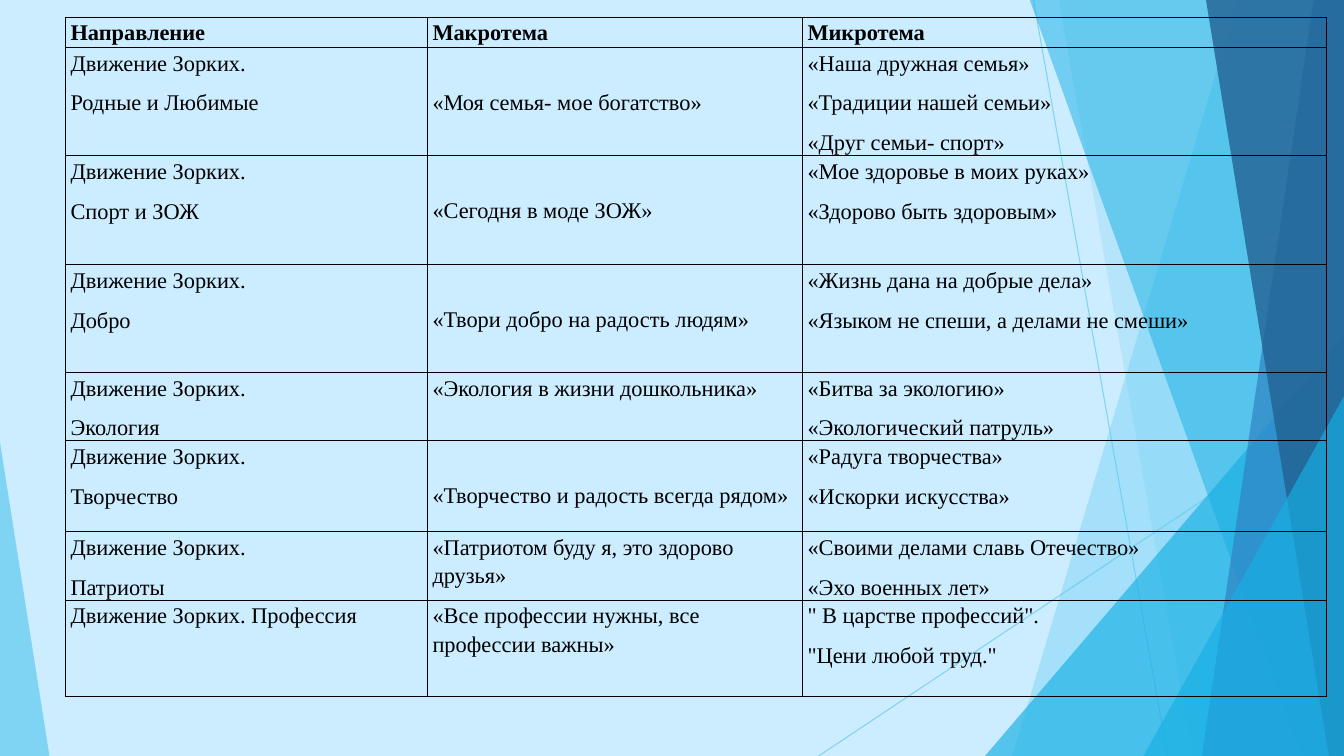
from lxml import etree
from pptx import Presentation
from pptx.dml.color import RGBColor
from pptx.enum.shapes import MSO_CONNECTOR, MSO_SHAPE
from pptx.oxml.ns import qn
from pptx.util import Pt

PX = 9144  # EMU per px, 100 px to the inch
W, H = 1333, 750
LINE = MSO_CONNECTOR.STRAIGHT
TRIANGLE = MSO_SHAPE.ISOSCELES_TRIANGLE

FONT = "Times New Roman"
BLACK = RGBColor(0x00, 0x00, 0x00)
PALE = RGBColor(0xCC, 0xEC, 0xFF)
SKY = RGBColor(0x5F, 0xCB, 0xEF)
CYAN = RGBColor(0x17, 0xB0, 0xE4)
BLUE = RGBColor(0x2E, 0x83, 0xC3)
NAVY = RGBColor(0x22, 0x62, 0x92)

COLS = [359, 372, 520]
ROW_HEIGHTS = [30, 107, 108, 107, 68, 90, 68, 96]
LOWERED_ROWS = {1, 2, 3, 5}  # middle cell starts level with the second line
LINE_STEP = 39
MOVEMENT = "Движение Зорких."
ROWS = [
    (["Направление"], ["Макротема"], ["Микротема"]),
    ([MOVEMENT, "Родные и Любимые"], ["«Моя семья- мое богатство»"],
     ["«Наша дружная семья»", "«Традиции нашей семьи»", "«Друг семьи- спорт»"]),
    ([MOVEMENT, "Спорт и ЗОЖ"], ["«Сегодня в моде ЗОЖ»"],
     ["«Мое здоровье в моих руках»", "«Здорово быть здоровым»"]),
    ([MOVEMENT, "Добро"], ["«Твори добро на радость людям»"],
     ["«Жизнь дана на добрые дела»", "«Языком не спеши, а делами не смеши»"]),
    ([MOVEMENT, "Экология"], ["«Экология в жизни дошкольника»"],
     ["«Битва за экологию»", "«Экологический патруль»"]),
    ([MOVEMENT, "Творчество"], ["«Творчество и радость всегда рядом»"],
     ["«Радуга творчества»", "«Искорки искусства»"]),
    ([MOVEMENT, "Патриоты"], ["«Патриотом буду я, это здорово друзья»"],
     ["«Своими делами славь Отечество»", "«Эхо военных лет»"]),
    ([MOVEMENT + " Профессия"], ["«Все профессии нужны, все профессии важны»"],
     ['" В царстве профессий".', '"Цени любой труд."']),
]


def set_alpha(sp, percent):
    for clr in sp._element.spPr.iter(qn("a:srgbClr")):
        etree.SubElement(clr, qn("a:alpha"), val=str(percent * 1000))


def paint(sp, color, alpha):
    sp.shadow.inherit = False
    sp.fill.solid()
    sp.fill.fore_color.rgb = color
    sp.line.fill.background()
    set_alpha(sp, alpha)


def add_ray(s, x1, y1, x2, y2):
    ln = s.shapes.add_connector(LINE, x1 * PX, y1 * PX, x2 * PX, y2 * PX)
    ln.line.color.rgb = SKY
    ln.line.width = Pt(0.75)
    set_alpha(ln, 70)
    etree.SubElement(ln._element.spPr, qn("a:effectLst"))


def add_band(s, right, top, bottom, top_x, bottom_x, color, alpha):
    """Fill from a slanted left edge to the straight right edge."""
    fb = s.shapes.build_freeform(top_x, top, scale=PX)
    fb.add_line_segments([(right, top), (right, bottom), (bottom_x, bottom)])
    paint(fb.convert_to_shape(), color, alpha)


def add_triangle(s, x, y, w, h, apex, color, alpha):
    sp = s.shapes.add_shape(TRIANGLE, x * PX, y * PX, w * PX, h * PX)
    sp.adjustments[0] = apex
    paint(sp, color, alpha)


def add_backdrop(s, w, h):
    add_ray(s, w - 308, 0, w - 175, h)
    add_ray(s, w, 403, w - 521, h)
    add_band(s, w, -1, h, w - 105, w - 329, SKY, 36)
    add_band(s, w, -1, h, w - 283, w - 150, SKY, 20)
    add_triangle(s, w - 356, h - 417, 356, 417, 1, CYAN, 66)
    add_band(s, w, -1, h, w - 312, w - 42, CYAN, 50)
    add_band(s, w, -1, h, w - 30, w - 141, BLUE, 70)
    add_band(s, w, -1, h, w - 137, w - 15, NAVY, 80)
    add_triangle(s, w - 199, h - 357, 199, 357, 1, CYAN, 66)
    add_triangle(s, 0, h - 311, 49, 311, 0, SKY, 70)


def write(p, text, size=16, bold=False, color=BLACK):
    p.line_spacing = 1.15
    p.space_after = Pt(8)
    r = p.add_run()
    r.text = text
    r.font.name = FONT
    r.font.size = Pt(size)
    r.font.bold = bold
    r.font.color.rgb = color


def add_borders(cell):
    tc_pr = cell._tc.get_or_add_tcPr()
    for side in ("lnL", "lnR", "lnT", "lnB"):
        ln = etree.SubElement(tc_pr, qn(f"a:{side}"), w=str(Pt(1)))
        fill = etree.SubElement(ln, qn("a:solidFill"))
        etree.SubElement(fill, qn("a:srgbClr"), val=str(BLACK))


def fill_cell(cell, lines, top, bold):
    cell.margin_left = cell.margin_right = 5 * PX
    cell.margin_top = top * PX
    cell.margin_bottom = 0
    add_borders(cell)
    cell.fill.background()
    tf = cell.text_frame
    for i, text in enumerate(lines):
        write(tf.add_paragraph() if i else tf.paragraphs[0], text, bold=bold)


def add_topics_table(s, x, y):
    frame = s.shapes.add_table(len(ROWS), len(COLS), x * PX, y * PX,
                               sum(COLS) * PX, sum(ROW_HEIGHTS) * PX)
    table = frame.table
    table.first_row = table.horz_banding = False
    for col, width in zip(table.columns, COLS):
        col.width = width * PX
    for i, (height, cells) in enumerate(zip(ROW_HEIGHTS, ROWS)):
        table.rows[i].height = height * PX
        for j, lines in enumerate(cells):
            top = LINE_STEP if j == 1 and i in LOWERED_ROWS else 0
            fill_cell(table.cell(i, j), lines, top, bold=i == 0)


def main():
    prs = Presentation()
    prs.slide_width, prs.slide_height = W * PX, H * PX
    s = prs.slides.add_slide(prs.slide_layouts[6])
    s.background.fill.solid()
    s.background.fill.fore_color.rgb = PALE
    add_backdrop(s, W, H)
    add_topics_table(s, 65, 17)
    prs.save("out.pptx")


if __name__ == "__main__":
    main()
